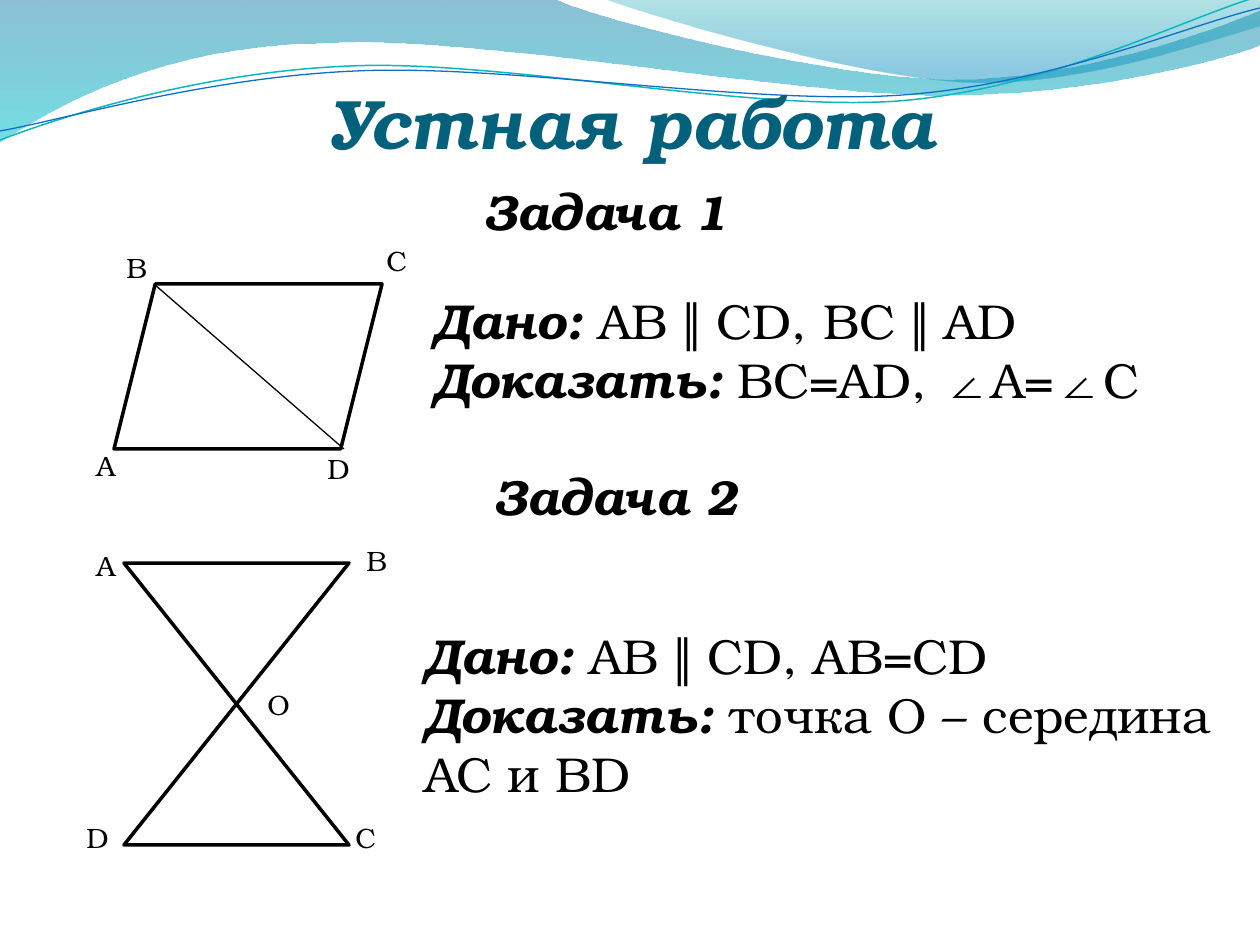
from lxml.etree import SubElement
from pptx import Presentation
from pptx.dml.color import RGBColor
from pptx.enum.shapes import MSO_CONNECTOR as Link, MSO_SHAPE as Kind
from pptx.enum.text import MSO_ANCHOR as Anchor, PP_ALIGN as Align
from pptx.oxml.ns import qn
from pptx.util import Emu, Pt

SCALE = 914400 / 126
FONT = "TeX Gyre Bonum"
BLACK = RGBColor(0x00, 0x00, 0x00)
TITLE = RGBColor(0x04, 0x61, 0x7B)
BLUE = RGBColor(0x00, 0x74, 0xA1)
CYAN = RGBColor(0x00, 0xC6, 0xCF)
TEAL = RGBColor(0x00, 0xA1, 0xA9)
SKY = RGBColor(0x00, 0x8B, 0xBF)
AQUA = RGBColor(0x0A, 0xB8, 0xBF)
NAVY = RGBColor(0x0F, 0x6F, 0xC6)


def px(size):
    """Turn px into EMU."""
    return Emu(round(size * SCALE))


def trace(shapes, route, close):
    """Draw an outline of two-number line steps and six-number curve steps."""
    start, *parts = route
    points = [part[i:i + 2] for part in parts for i in range(0, len(part), 2)]
    pen = shapes.build_freeform(*start, scale=SCALE)
    pen.add_line_segments(points, close=close)
    shape = pen.convert_to_shape()
    shape.shadow.inherit = False
    steps = iter(list(shape._element.iter(qn("a:lnTo"))))
    for part in parts:
        group = [next(steps) for _ in range(len(part) // 2)]
        if len(group) == 3:
            first, *rest = group
            first.tag = qn("a:cubicBezTo")
            for step in rest:
                first.append(step[0])
                step.getparent().remove(step)
    return shape


def add_wave(shapes, route, stops):
    """Fill an outline with a see-through gradient running down."""
    shape = trace(shapes, route, True)
    shape.line.fill.background()
    shape.fill.gradient()
    shape.fill.gradient_angle = 270
    for stop, (place, color, _) in zip(shape.fill.gradient_stops, stops):
        stop.position = place
        stop.color.rgb = color
    tints = shape._element.spPr.iter(qn("a:srgbClr"))
    for tint, (_, _, alpha) in zip(tints, stops):
        SubElement(tint, qn("a:alpha")).set("val", str(alpha * 1000))


def add_curve(shapes, route, color, width):
    """Draw an open curve."""
    shape = trace(shapes, route, False)
    shape.fill.background()
    shape.line.color.rgb = color
    shape.line.width = Pt(width)


def write(frame, lines, size=16, color=BLACK, align=Align.LEFT):
    """Fill a frame with lines of (text, bold, italic) runs."""
    frame.word_wrap = True
    for row, runs in enumerate(lines):
        para = frame.add_paragraph() if row else frame.paragraphs[0]
        para.alignment = align
        for text, bold, italic in runs:
            run = para.add_run()
            run.text = text
            font = run.font
            font.name, font.size = FONT, Pt(size)
            font.bold, font.italic = bold, italic
            font.color.rgb = color


def add_text(shapes, box, lines, top=6, **style):
    """Add a text box."""
    frame = shapes.add_textbox(*map(px, box)).text_frame
    frame.margin_top = px(top)
    write(frame, lines, **style)


def add_marks(shapes, marks, width, height):
    """Name the points of a figure."""
    for name, left, top in marks:
        add_text(shapes, (left, top, width, height), [[(name, False, False)]])


def add_shape(shapes, kind, box, turn=0):
    """Add an unfilled shape with a black outline."""
    shape = shapes.add_shape(kind, *map(px, box))
    shape.shadow.inherit = False
    shape.fill.background()
    shape.line.color.rgb = BLACK
    shape.line.width = Pt(2)
    shape.rotation = turn


def add_line(shapes, ends):
    """Add a thin straight line."""
    line = shapes.add_connector(Link.STRAIGHT, *map(px, ends))
    line.line.color.rgb = BLACK
    line.line.width = Pt(0.75)
    SubElement(line._element.spPr, qn("a:effectLst"))


def add_waves(shapes):
    """Draw the waves along the top edge."""
    add_wave(shapes, [(0, 0), (554, -1), (600, 21, 837, 79, 955, 79),
                      (1075, 79, 1207, 33, 1260, 11), (1261, 45),
                      (1239, 55, 1096, 96, 940, 95),
                      (784, 95, 481, 35, 324, 43),
                      (163, 45, 58, 105, -1, 142)],
             [(0, BLUE, 45), (1, CYAN, 55)])
    add_wave(shapes, [(604, -1), (641, 14, 859, 78, 969, 82),
                      (1079, 86, 1211, 40, 1260, 26), (1260, 0)],
             [(0, TEAL, 30), (0.8, SKY, 45)])
    lines = shapes.add_group_shape().shapes
    add_curve(lines, [(0, 140), (60, 117, 199, 72, 349, 66),
                      (498, 59, 747, 112, 898, 101),
                      (1050, 89, 1182, 19, 1257, -3)], AQUA, 0.85)
    add_curve(lines, [(0, 131), (59, 121, 207, 77, 357, 71),
                      (508, 64, 752, 106, 903, 95),
                      (1053, 84, 1185, 26, 1260, 8)], NAVY, 0.75)


def add_title(slide, text):
    """Place the title over the waves."""
    title = slide.shapes.title
    title.left, title.top, title.width, title.height = map(px, (63, 6, 1134, 158))
    frame = title.text_frame
    frame.vertical_anchor = Anchor.BOTTOM
    frame.margin_left = frame.margin_right = frame.margin_bottom = 0
    frame.margin_top = px(6)
    write(frame, [[(text, True, True)]], size=40, color=TITLE, align=Align.CENTER)
    slide.shapes._spTree.append(title._element)


def main():
    """Build the slide."""
    deck = Presentation()
    deck.slide_width, deck.slide_height = px(1260), px(945)
    slide = deck.slides.add_slide(deck.slide_layouts[5])
    shapes = slide.shapes
    add_waves(shapes)
    add_title(slide, "Устная работа")

    add_text(shapes, (421, 285, 824, 190), [
        [("Дано:", True, True), (" АВ║СD, ВС║АD", False, False)],
        [("Доказать:", True, True), (" ВС=АD, ", False, False),
         ("∠", False, True), ("А=", False, False),
         ("∠", False, True), ("С", False, False)],
    ], size=28, align=Align.JUSTIFY)

    first = shapes.add_group_shape().shapes
    add_marks(first, [("D", 315, 446)], 68, 55)
    add_shape(first, Kind.PARALLELOGRAM, (114, 284, 268, 165))
    add_line(first, (154, 284, 344, 449))
    add_marks(shapes, [("A", 84, 443), ("B", 114, 245), ("C", 374, 238)], 67, 47)

    second = shapes.add_group_shape().shapes
    add_marks(second, [("D", 74, 815), ("C", 343, 815), ("O", 255, 682),
                       ("B", 354, 538), ("A", 84, 543)], 97, 74)
    for top, turn in ((704, 0), (563, 180)):
        add_shape(second, Kind.ISOSCELES_TRIANGLE, (124, top, 225, 141), turn)

    add_text(shapes, (412, 582, 814, 267), [
        [("Дано:", True, True), (" АВ║СD, АВ=СD", False, False)],
        [("Доказать:", True, True),
         (" точка О – середина АС и ВD", False, False)],
    ], top=44, size=28)
    for text, left, top in (("Задача 1", 471, 175), ("Задача 2", 481, 460)):
        add_text(shapes, (left, top, 367, 72), [[(text, True, True)]], size=28)

    deck.save("out.pptx")


if __name__ == "__main__":
    main()
